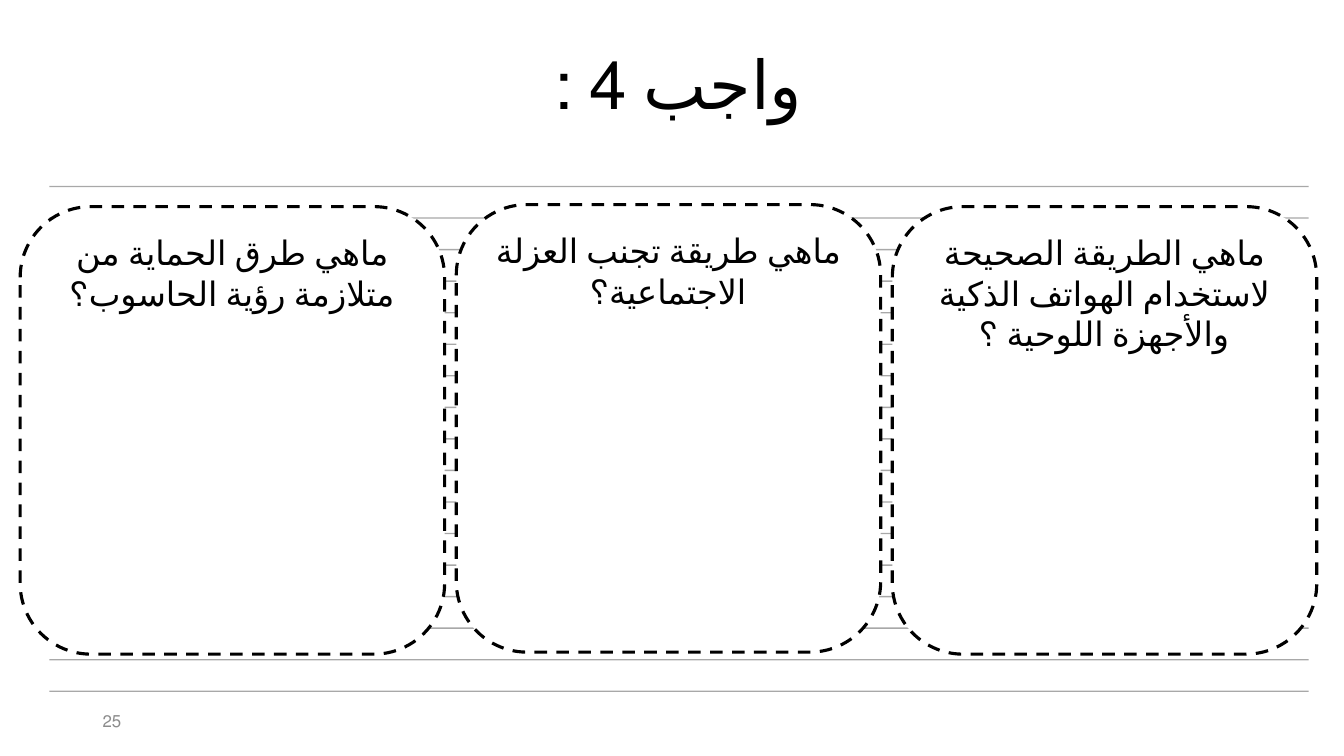
from lxml import etree
from pptx import Presentation
from pptx.dml.color import RGBColor
from pptx.enum.dml import MSO_LINE
from pptx.enum.lang import MSO_LANGUAGE_ID
from pptx.enum.shapes import MSO_CONNECTOR, MSO_SHAPE
from pptx.enum.text import MSO_ANCHOR, MSO_AUTO_SIZE, PP_ALIGN
from pptx.oxml.ns import qn
from pptx.util import Inches, Pt

BLACK = RGBColor(0x00, 0x00, 0x00)
WHITE = RGBColor(0xFF, 0xFF, 0xFF)
GREY = RGBColor(0x80, 0x80, 0x80)
PALE = RGBColor(0x8C, 0x8C, 0x8C)
DASH = MSO_LINE.DASH
ARABIC = MSO_LANGUAGE_ID.ARABIC
LINE = MSO_CONNECTOR.STRAIGHT
ROUND = MSO_SHAPE.ROUNDED_RECTANGLE
TOP, MIDDLE = MSO_ANCHOR.TOP, MSO_ANCHOR.MIDDLE
LEFT, CENTER = PP_ALIGN.LEFT, PP_ALIGN.CENTER
FONT = "Calibri"

# Ruled lines: edges, first row and row height
RULE_X1, RULE_X2 = 0.49, 12.98
RULE_Y, RULE_GAP, RULE_COUNT = 1.85, 0.313, 17

# Cards: left edge, column step, size and top of each
CARD_X, CARD_STEP = 0.2, 4.325
CARD_W, CARD_H = 4.21, 4.44
CARDS = [
    (2.05, "ماهي طرق الحماية من متلازمة رؤية الحاسوب؟"),
    (2.03, "ماهي طريقة تجنب العزلة الاجتماعية؟"),
    (2.05, "ماهي الطريقة الصحيحة لاستخدام الهواتف الذكية والأجهزة اللوحية ؟"),
]


def box(*sizes):
    return [Inches(size) for size in sizes]


def write(shape, text, size, color, align=CENTER, anchor=MIDDLE):
    """Put one right-to-left paragraph in a shape."""
    frame = shape.text_frame
    frame.word_wrap = True
    frame.auto_size = MSO_AUTO_SIZE.NONE
    frame.vertical_anchor = anchor
    frame.text = text
    para = frame.paragraphs[0]
    para.alignment = align
    para.font.name = FONT
    para.font.size = Pt(size)
    para.font.color.rgb = color
    para.runs[0].font.language_id = ARABIC
    para._p.get_or_add_pPr().set("rtl", "1")
    return para


def add_rules(slide):
    group = slide.shapes.add_group_shape()
    for row in range(RULE_COUNT):
        y = RULE_Y + row * RULE_GAP
        rule = group.shapes.add_connector(LINE, *box(RULE_X1, y, RULE_X2, y))
        rule.line.color.rgb = GREY
        rule.line.width = Pt(1)
        # Partly see-through line without a shadow
        props = rule._element.spPr
        tint = props.find(".//" + qn("a:srgbClr"))
        etree.SubElement(tint, qn("a:alpha"), val="68000")
        etree.SubElement(props, qn("a:effectLst"))


def add_card(slide, col, top, text):
    left = CARD_X + col * CARD_STEP
    card = slide.shapes.add_shape(ROUND, *box(left, top, CARD_W, CARD_H))
    card.shadow.inherit = False
    card.fill.solid()
    card.fill.fore_color.rgb = WHITE
    card.line.color.rgb = BLACK
    card.line.width = Pt(2.25)
    card.line.dash_style = DASH
    write(card, text, 24, BLACK, anchor=TOP)


def add_title(slide, text):
    title = slide.shapes.title
    title.left, title.top, title.width, title.height = box(0.41, 0.15, 12.65, 1.45)
    write(title, text, 48, BLACK).line_spacing = 0.9


def add_number(slide, text):
    number = slide.shapes.add_textbox(*box(0.92, 6.95, 3, 0.4))
    write(number, text, 12, PALE, align=LEFT)


def main():
    deck = Presentation()
    deck.slide_width, deck.slide_height = box(13.33, 7.5)
    slide = deck.slides.add_slide(deck.slide_layouts[5])
    add_rules(slide)
    add_number(slide, "25")
    add_title(slide, "واجب 4 :")
    for col, (top, text) in enumerate(CARDS):
        add_card(slide, col, top, text)
    deck.save("out.pptx")


if __name__ == "__main__":
    main()
